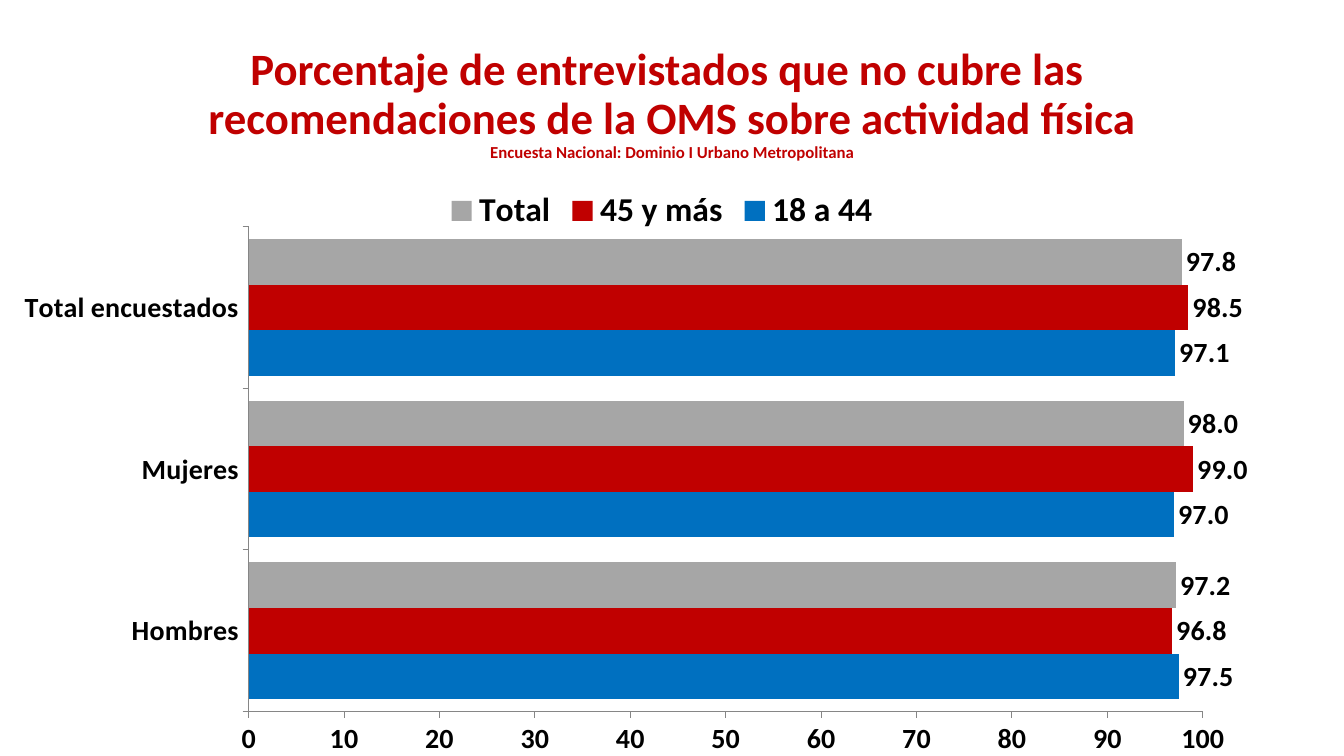
from lxml import etree
from pptx import Presentation
from pptx.chart.data import CategoryChartData
from pptx.dml.color import RGBColor
from pptx.enum.chart import XL_CHART_TYPE, XL_LABEL_POSITION, XL_LEGEND_POSITION, XL_TICK_MARK
from pptx.enum.text import MSO_ANCHOR, PP_ALIGN
from pptx.util import Cm, Pt

BARS = XL_CHART_TYPE.BAR_CLUSTERED
OUTSIDE_END = XL_LABEL_POSITION.OUTSIDE_END
LEGEND_TOP = XL_LEGEND_POSITION.TOP
TICK_OUTSIDE = XL_TICK_MARK.OUTSIDE
TICK_NONE = XL_TICK_MARK.NONE
MIDDLE = MSO_ANCHOR.MIDDLE
CENTER = PP_ALIGN.CENTER
CHART_NS = "http://schemas.openxmlformats.org/drawingml/2006/chart"

GROUPS = ["Hombres", "Mujeres", "Total encuestados"]
AGES = [
    ("18 a 44", (97.5, 97.0, 97.1), "0070C0"),
    ("45 y más", (96.8, 99.0, 98.5), "C00000"),
    ("Total", (97.2, 98.0, 97.8), "A6A6A6"),
]


def rgb(value):
    return RGBColor.from_string(value)


def style_font(font, size, color, bold=True, name="Calibri"):
    font.name = name
    font.size = Pt(size)
    font.bold = bold
    font.color.rgb = rgb(color)


def write(paragraph, text, **style):
    for index, line in enumerate(text.split("\n")):
        if index:
            paragraph.add_line_break()
        if line:
            run = paragraph.add_run()
            run.text = line
            style_font(run.font, **style)


class SurveySlide:
    accent = "C00000"
    ink = "000000"
    axis_gray = "868686"
    grid = "FFFFFF"

    def __init__(self, presentation):
        self.slide = presentation.slides.add_slide(presentation.slide_layouts[6])

    def heading(self, title, source, left, top, width, height):
        box = self.slide.shapes.add_textbox(Cm(left), Cm(top), Cm(width), Cm(height))
        frame = box.text_frame
        frame.word_wrap = True
        frame.vertical_anchor = MIDDLE
        paragraph = frame.paragraphs[0]
        paragraph.alignment = CENTER
        paragraph.line_spacing = 0.9
        write(paragraph, title + "\n", size=32, color=self.accent)
        write(paragraph, source, size=12, color=self.accent)

    def axis(self, axis, tick):
        style_font(axis.tick_labels.font, 20, self.ink)
        axis.major_tick_mark = tick
        axis.minor_tick_mark = TICK_NONE
        axis.format.line.color.rgb = rgb(self.axis_gray)
        axis.format.line.width = Pt(0.75)

    def place_plot(self, chart, **fractions):
        plot_area = chart.plots[0]._element.getparent()
        for old in plot_area.findall(f"{{{CHART_NS}}}layout"):
            plot_area.remove(old)
        layout = etree.Element(f"{{{CHART_NS}}}layout")
        manual = etree.SubElement(layout, f"{{{CHART_NS}}}manualLayout")
        settings = {"layoutTarget": "inner", "xMode": "edge", "yMode": "edge", **fractions}
        for tag, value in settings.items():
            etree.SubElement(manual, f"{{{CHART_NS}}}{tag}", val=str(value))
        plot_area.insert(0, layout)

    def bar_chart(self, groups, ages, left, top, width, height):
        data = CategoryChartData(number_format="0.0")
        data.categories = groups
        for name, values, _ in ages:
            data.add_series(name, values)
        chart = self.slide.shapes.add_chart(
            BARS, Cm(left), Cm(top), Cm(width), Cm(height), data).chart
        style_font(chart.font, 10, self.ink, bold=False)
        chart.has_title = False
        chart.has_legend = True
        chart.legend.position = LEGEND_TOP
        chart.legend.include_in_layout = False
        style_font(chart.legend.font, 24, self.ink)

        self.axis(chart.category_axis, TICK_OUTSIDE)
        scale = chart.value_axis
        self.axis(scale, TICK_OUTSIDE)
        scale.minimum_scale, scale.maximum_scale, scale.major_unit = 0, 100, 10
        scale.tick_labels.number_format = "0"
        scale.tick_labels.number_format_is_linked = False
        scale.major_gridlines.format.line.color.rgb = rgb(self.grid)
        scale.major_gridlines.format.line.width = Pt(0.75)

        plot = chart.plots[0]
        plot.gap_width = 55
        plot.overlap = 0
        plot.vary_by_categories = False
        for series, (_, _, color) in zip(plot.series, ages):
            series.format.fill.solid()
            series.format.fill.fore_color.rgb = rgb(color)
            labels = series.data_labels
            labels.show_value = True
            labels.number_format = "0.0"
            labels.number_format_is_linked = False
            labels.position = OUTSIDE_END
            style_font(labels.font, 20, self.ink)
        self.place_plot(chart, x=0.18, y=0.087, w=0.739, h=0.844)


def main():
    presentation = Presentation()
    presentation.slide_width = Cm(33.87)
    presentation.slide_height = Cm(19.05)
    survey = SurveySlide(presentation)
    survey.heading(
        "Porcentaje de entrevistados que no cubre las \n"
        "recomendaciones de la OMS sobre actividad física",
        "Encuesta Nacional: Dominio I Urbano Metropolitana",
        2.34, 0.56, 29.21, 4.14)
    survey.bar_chart(GROUPS, AGES, 0.41, 4.45, 32.54, 14.6)
    presentation.save("out.pptx")


if __name__ == "__main__":
    main()
